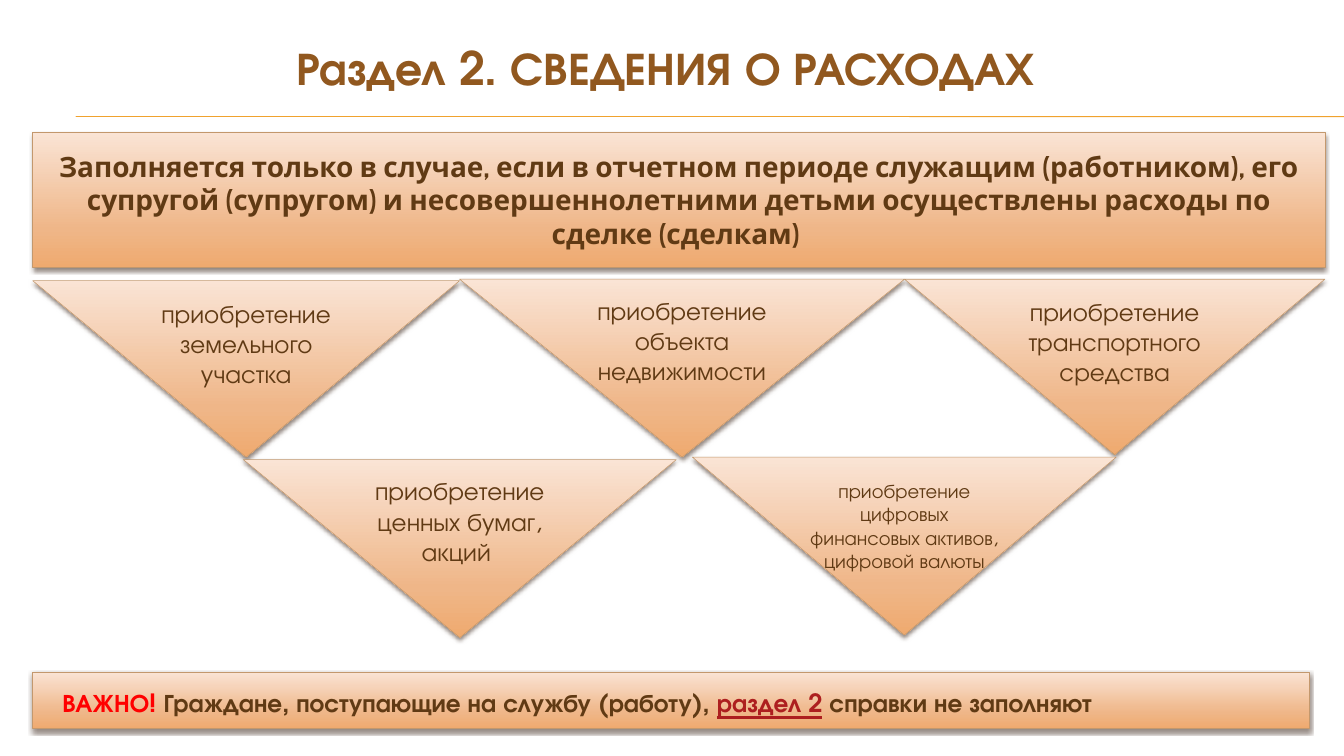
from lxml import etree
from pptx import Presentation
from pptx.dml.color import RGBColor
from pptx.enum.shapes import MSO_CONNECTOR, MSO_SHAPE
from pptx.enum.text import MSO_ANCHOR, PP_ALIGN
from pptx.oxml import parse_xml
from pptx.oxml.ns import nsdecls, qn
from pptx.util import Inches, Pt

RECT, MERGE = MSO_SHAPE.RECTANGLE, MSO_SHAPE.FLOWCHART_MERGE
LINE = MSO_CONNECTOR.STRAIGHT
CENTER = PP_ALIGN.CENTER
TOP, MIDDLE = MSO_ANCHOR.TOP, MSO_ANCHOR.MIDDLE
SANS, HEAD = "TeX Gyre Adventor", "Cabin"
BROWN = "603A14"
STOPS = [(0, "FAE4D5"), (72, "EFB688"), (100, "EFAA6F")]
GRAD = (
    f'<a:gradFill {nsdecls("a")} rotWithShape="1"><a:gsLst>'
    + "".join(f'<a:gs pos="{pos * 1000}"><a:srgbClr val="{tone}"/></a:gs>'
              for pos, tone in STOPS)
    + '</a:gsLst><a:lin ang="5400000" scaled="0"/></a:gradFill>'
)
SHADOW = (
    f'<a:effectLst {nsdecls("a")}><a:outerShdw blurRad="76200" dist="50800" '
    'dir="5400000" rotWithShape="0"><a:srgbClr val="4E3B30">'
    '<a:alpha val="60000"/></a:srgbClr></a:outerShdw></a:effectLst>'
)


def add_run(para, text, size, tone=BROWN, bold=False, face=SANS):
    run = para.add_run()
    run.text = text
    font = run.font
    font.size, font.name, font.bold = Pt(size), face, bold
    font.color.rgb = RGBColor.from_string(tone)
    return run


def add_box(kind, left, top, width, height, anchor=MIDDLE):
    """Add a shape with the orange gradient and soft shadow."""
    box = slide.shapes.add_shape(
        kind, Inches(left), Inches(top), Inches(width), Inches(height))
    box.line.color.rgb = RGBColor.from_string("C3986D")
    box.line.width = Pt(0.79)
    props = box._element.spPr
    props.find(qn("a:ln")).addprevious(parse_xml(GRAD))
    props.append(parse_xml(SHADOW))
    box.text_frame.word_wrap = True
    box.text_frame.vertical_anchor = anchor
    return box.text_frame


prs = Presentation()
prs.slide_width, prs.slide_height = Inches(26.67), Inches(15)
slide = prs.slides.add_slide(prs.slide_layouts[6])

# Rule under the title
for start, end in [(2.3, 2.3), (2.31, 2.32)]:
    rule = slide.shapes.add_connector(
        LINE, Inches(1.5), Inches(start), Inches(26.67), Inches(end))
    rule.line.color.rgb = RGBColor.from_string("F0A22E")
    rule.line.width = Pt(0.75)
    etree.SubElement(rule._element.spPr, qn("a:effectLst"))

# Title
title = slide.shapes.add_textbox(
    Inches(4.04), Inches(0.73), Inches(18.58), Inches(1.21)).text_frame
title.word_wrap = True
para = title.paragraphs[0]
para.alignment = CENTER
add_run(para, "Раздел 2. СВЕДЕНИЯ О РАСХОДАХ ", 66, "91581F", True)

# Condition
para = add_box(RECT, 0.65, 2.62, 25.64, 2.68).paragraphs[0]
para.alignment = CENTER
add_run(para, "Заполняется только в случае, если в отчетном периоде служащим "
        "(работником), его супругой (супругом) и несовершеннолетними детьми "
        "осуществлены расходы по сделке (сделкам) ", 40, BROWN, True, HEAD)

# Kinds of expense: left, top, width, height, text inset, size, paragraphs
KINDS = [
    (9.12, 5.54, 8.83, 3.53, 0.31, 36, ["приобретение объекта недвижимости"]),
    (17.95, 5.54, 8.34, 3.48, 0.33, 36,
     ["приобретение транспортного средства"]),
    (0.65, 5.57, 8.47, 3.5, 0.34, 36, ["приобретение земельного участка"]),
    (4.83, 9.12, 8.59, 3.53, 0.32, 36,
     ["приобретение", "ценных бумаг, акций "]),
    (13.74, 9.07, 8.41, 3.53, 0.43, 28,
     ["приобретение цифровых финансовых активов, цифровой валюты"]),
]
for left, top, width, height, inset, size, texts in KINDS:
    frame = add_box(MERGE, left, top, width, height, TOP)
    frame.margin_top = Inches(inset)
    for i, text in enumerate(texts):
        para = frame.add_paragraph() if i else frame.paragraphs[0]
        para.alignment = CENTER
        add_run(para, text, size)

# Important note, with a tab stop after the warning word
para = add_box(RECT, 0.65, 13.33, 25.33, 1.13).paragraphs[0]
para.alignment = PP_ALIGN.LEFT
para.line_spacing = 1.15
props = para._p.get_or_add_pPr()
props.set("indent", str(Inches(0.49)))
tabs = etree.SubElement(props, qn("a:tabLst"))
etree.SubElement(tabs, qn("a:tab"), pos=str(Inches(3.06)), algn="l")
add_run(para, "ВАЖНО!\t", 36, "FF0000", True)
add_run(para, "Граждане, поступающие на службу (работу), ", 36, BROWN, True)
add_run(para, "раздел 2", 36, "AD1F1F", True).font.underline = True
add_run(para, " справки не заполняют", 36, BROWN, True)

prs.save("out.pptx")
